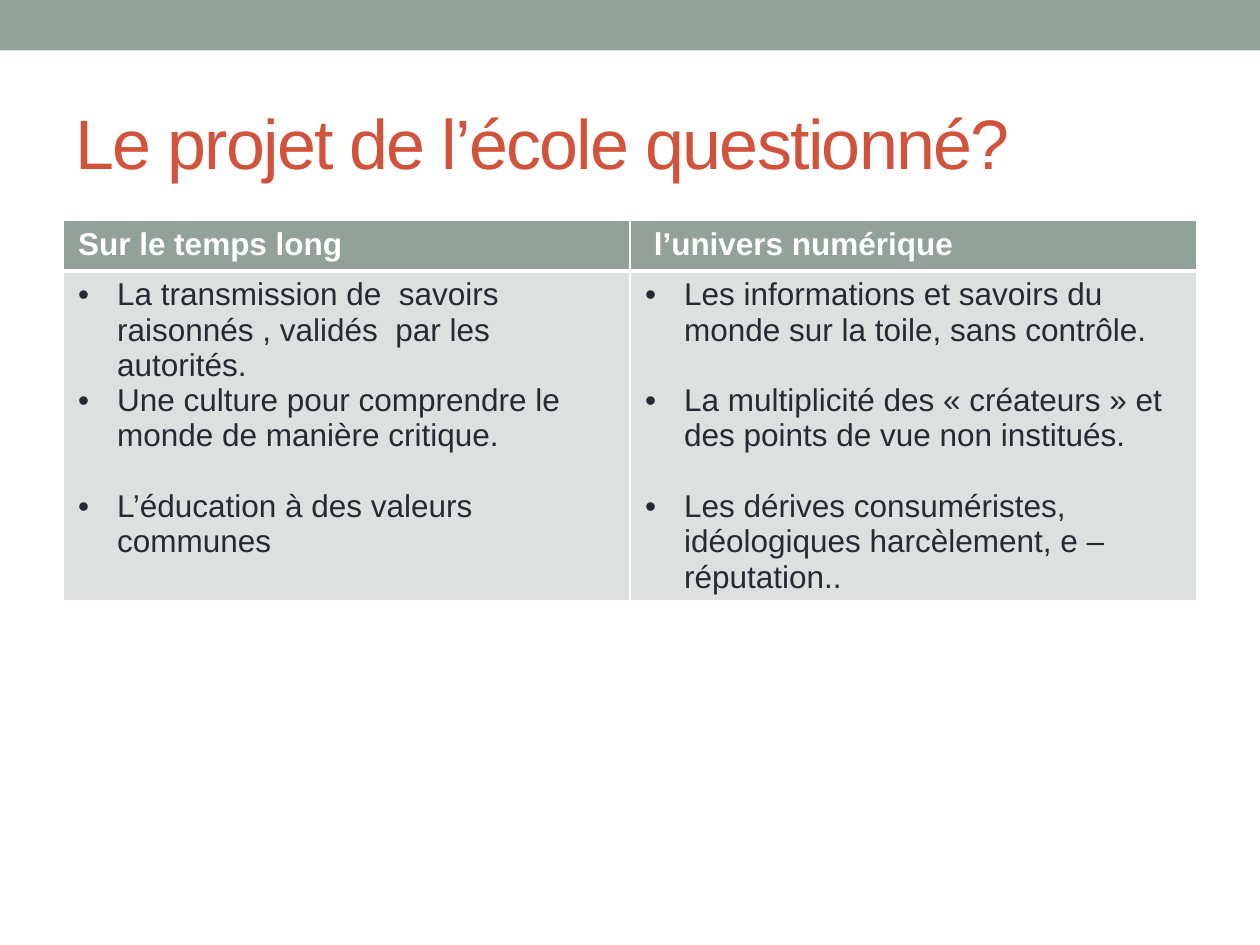
"""Build a slide that compares school over time with the digital world."""
from dataclasses import dataclass

import pptx
import pptx.dml.color
import pptx.enum.shapes
import pptx.enum.text
import pptx.oxml
import pptx.oxml.ns
import pptx.util
from pptx.util import Inches

RGBColor = pptx.dml.color.RGBColor
SAGE = RGBColor(0x93, 0xA2, 0x99)
RUST = RGBColor(0xD2, 0x53, 0x3C)
PALE = RGBColor(0xDC, 0xE0, 0xDE)
DARK = RGBColor(0x29, 0x29, 0x34)
WHITE = RGBColor(0xFF, 0xFF, 0xFF)
LINE_GAP = 20.2


@dataclass
class Item:
    text: str
    gap: float = 0


@dataclass
class Column:
    head: str
    items: list[Item]


COLUMNS = [
    Column("Sur le temps long", [
        Item("La transmission de  savoirs raisonnés , validés  par les autorités."),
        Item("Une culture pour comprendre le monde de manière critique."),
        Item("L’éducation à des valeurs communes", LINE_GAP),
    ]),
    Column(" l’univers numérique", [
        Item("Les informations et savoirs du monde sur la toile, sans contrôle."),
        Item("La multiplicité des « créateurs » et des points de vue non institués.", LINE_GAP),
        Item("Les dérives consuméristes, idéologiques harcèlement, e –réputation..", LINE_GAP),
    ]),
]


def write(p, text: str, *, size: float = 18, color: RGBColor = DARK, bold: bool = False,
          spacing: float = 0, bullet: bool = False, gap: float = 0) -> None:
    r = p.add_run()
    r.text = text
    r.font.name = "Arial"
    r.font.size = pptx.util.Pt(size)
    r.font.bold = bold
    r.font.color.rgb = color
    p.alignment = pptx.enum.text.PP_ALIGN.LEFT
    p.space_before = pptx.util.Pt(gap)
    if spacing:
        r.font._element.set("spc", str(int(spacing * 100)))
    if bullet:
        pPr = p._p.get_or_add_pPr()
        pPr.set("marL", str(Inches(0.31)))
        pPr.set("indent", str(-Inches(0.31)))
        ns = pptx.oxml.ns.nsdecls("a")
        pPr.append(pptx.oxml.parse_xml(f'<a:buFont {ns} typeface="Arial"/>'))
        pPr.append(pptx.oxml.parse_xml(f'<a:buChar {ns} char="•"/>'))


def style_cell(cell, fill: RGBColor, borders: dict[str, float]) -> None:
    cell.margin_left = cell.margin_right = Inches(0.12)
    cell.margin_top = cell.margin_bottom = Inches(0.05)
    tcPr = cell._tc.get_or_add_tcPr()
    for side, width in borders.items():
        tcPr.append(pptx.oxml.parse_xml(
            f'<a:ln{side} {pptx.oxml.ns.nsdecls("a")} w="{pptx.util.Pt(width)}">'
            f'<a:solidFill><a:srgbClr val="{WHITE}"/></a:solidFill></a:ln{side}>'))
    cell.fill.solid()
    cell.fill.fore_color.rgb = fill


def add_band(s) -> None:
    sp = s.shapes.add_shape(pptx.enum.shapes.MSO_SHAPE.RECTANGLE, 0, 0, Inches(10), Inches(0.4))
    sp.shadow.inherit = False
    sp.fill.solid()
    sp.fill.fore_color.rgb = SAGE
    sp.line.fill.background()


def add_title(s, text: str) -> None:
    sp = s.shapes.title
    sp.left, sp.top, sp.width, sp.height = map(Inches, (0.5, 0.58, 9, 1.08))
    tf = sp.text_frame
    tf.word_wrap = True
    tf.auto_size = pptx.enum.text.MSO_AUTO_SIZE.NONE
    tf.vertical_anchor = pptx.enum.text.MSO_ANCHOR.MIDDLE
    write(tf.paragraphs[0], text, size=40, color=RUST, spacing=-1)


def add_comparison(s, columns: list[Column]) -> None:
    table = s.shapes.add_table(2, len(columns), Inches(0.5), Inches(1.75),
                               Inches(9), Inches(3.02)).table
    table.rows[0].height = Inches(0.4)
    table.rows[1].height = Inches(2.62)
    for i, column in enumerate(columns):
        head, body = table.cell(0, i), table.cell(1, i)
        style_cell(head, SAGE, {"L": 1, "R": 1, "T": 1, "B": 3})
        style_cell(body, PALE, {"L": 1, "R": 1, "T": 3, "B": 1})
        write(head.text_frame.paragraphs[0], column.head, color=WHITE, bold=True)
        tf = body.text_frame
        for n, item in enumerate(column.items):
            p = tf.add_paragraph() if n else tf.paragraphs[0]
            write(p, item.text, bullet=True, gap=item.gap)


def main() -> None:
    prs = pptx.Presentation()
    prs.slide_width, prs.slide_height = Inches(10), Inches(7.5)
    s = prs.slides.add_slide(prs.slide_layouts[5])
    add_band(s)
    add_title(s, "Le projet de l’école questionné?")
    add_comparison(s, COLUMNS)
    prs.save("out.pptx")


if __name__ == "__main__":
    main()
